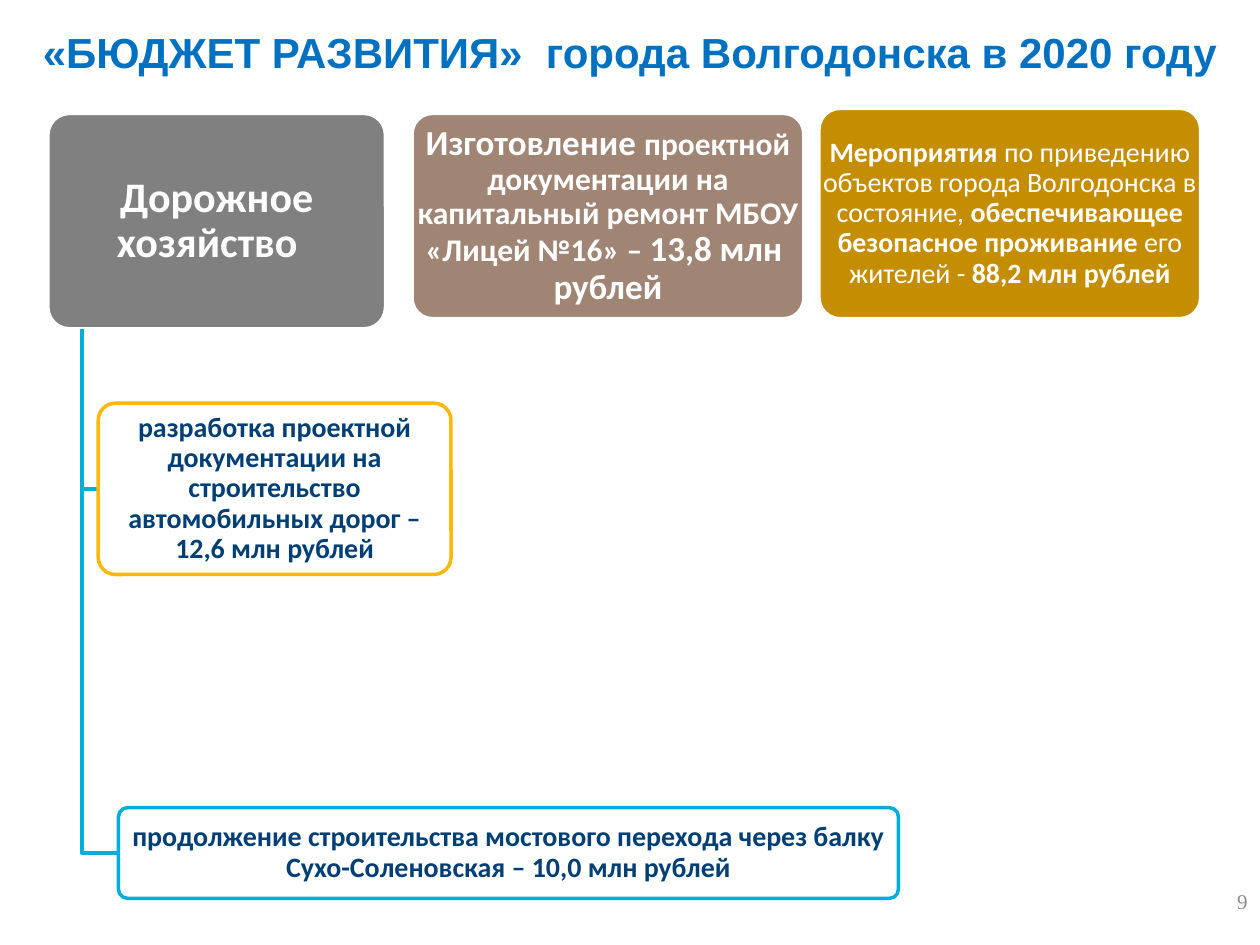
from lxml import etree
from pptx import Presentation
from pptx.dml.color import RGBColor
from pptx.enum.shapes import MSO_SHAPE
from pptx.enum.text import MSO_ANCHOR, MSO_AUTO_SIZE, PP_ALIGN
from pptx.util import Inches, Pt

ROUND = MSO_SHAPE.ROUNDED_RECTANGLE
TOP, MIDDLE = MSO_ANCHOR.TOP, MSO_ANCHOR.MIDDLE
CENTER, RIGHT = PP_ALIGN.CENTER, PP_ALIGN.RIGHT
NO_FIT = MSO_AUTO_SIZE.NONE

WHITE, NAVY, CYAN, AMBER = "FFFFFF", "003F75", "00ADDC", "FEB80A"


def rgb(value):
    return RGBColor.from_string(value)


def add_run(p, text, size=16, color=WHITE, bold=True, font="Calibri"):
    r = p.add_run()
    r.text = text
    r.font.name = font
    r.font.size = Pt(size)
    r.font.bold = bold
    r.font.color.rgb = rgb(color)


class Deck:
    line_width = 2
    corner = 0.1

    def __init__(self, width, height):
        self.prs = Presentation()
        self.prs.slide_width, self.prs.slide_height = Inches(width), Inches(height)
        self.s = self.prs.slides.add_slide(self.prs.slide_layouts[5])

    def outline(self, sp, color):
        sp.shadow.inherit = False
        sp.line.color.rgb = rgb(color)
        sp.line.width = Pt(self.line_width)

    def frame(self, sp, anchor=MIDDLE, align=CENTER, inset=(0.1, 0.05)):
        tf = sp.text_frame
        tf.word_wrap = True
        tf.auto_size = NO_FIT
        tf.vertical_anchor = anchor
        tf.margin_left = tf.margin_right = Inches(inset[0])
        tf.margin_top = tf.margin_bottom = Inches(inset[1])
        p = tf.paragraphs[0]
        p.alignment = align
        return p

    def title(self, text, x, y, w, h):
        sp = self.s.shapes.title
        sp.left, sp.top, sp.width, sp.height = map(Inches, (x, y, w, h))
        sp.fill.solid()
        sp.fill.fore_color.rgb = rgb(WHITE)
        add_run(self.frame(sp, TOP), text, size=24, color="0070C0", font="Arial")

    def text(self, runs, x, y, w, h, **layout):
        sp = self.s.shapes.add_textbox(*map(Inches, (x, y, w, h)))
        p = self.frame(sp, **layout)
        for text, style in runs:
            add_run(p, text, **style)
        return p

    def card(self, runs, x, y, w, h, fill=None, line=WHITE, inset=(0.03, 0.02)):
        sp = self.s.shapes.add_shape(ROUND, *map(Inches, (x, y, w, h)))
        sp.adjustments[0] = self.corner
        if fill:
            sp.fill.solid()
            sp.fill.fore_color.rgb = rgb(fill)
        else:
            sp.fill.background()
        self.outline(sp, line)
        # A separate box keeps the rounded corners from narrowing the text
        self.text(runs, x, y, w, h, inset=inset).line_spacing = 0.9

    def elbow(self, x1, y1, x2, y2):
        builder = self.s.shapes.build_freeform(Inches(x1), Inches(y1), scale=1.0)
        builder.add_line_segments(
            [(Inches(x1), Inches(y2)), (Inches(x2), Inches(y2))], close=False)
        sp = builder.convert_to_shape()
        sp.fill.background()
        self.outline(sp, CYAN)


def main():
    deck = Deck(10, 7.5)
    deck.title("«БЮДЖЕТ РАЗВИТИЯ»  города Волгодонска в 2020 году", 0, 0.16, 10, 0.5)

    # Main spending areas
    deck.card([("Дорожное хозяйство  ", {"size": 24})],
              0.38, 0.9, 2.68, 1.71, fill="808080", inset=(0.05, 0.03))
    deck.card([("Изготовление ", {"size": 20}),
               ("проектной документации на капитальный ремонт МБОУ «Лицей №16» – ",
                {"size": 18}),
               ("13,8 млн  рублей", {"size": 20})],
              3.27, 0.9, 3.11, 1.63, fill="A08574", inset=(0.04, 0.03))
    deck.card([("Мероприятия ", {}),
               ("по приведению объектов города Волгодонска в состояние, ",
                {"bold": False}),
               ("обеспечивающее безопасное проживание", {}),
               (" его жителей - ", {"bold": False}),
               ("88,2 млн рублей", {})],
              6.5, 0.86, 3.03, 1.67, fill="C58D01")

    # Road projects hanging from the first area
    trunk_x, trunk_y = 0.65, 2.61
    projects = [
        ("разработка проектной документации на строительство автомобильных дорог – "
         "12,6 млн рублей", AMBER, (0.78, 3.2, 2.8, 1.36)),
        ("продолжение строительства мостового перехода через балку "
         "Сухо-Соленовская – 10,0 млн рублей", CYAN, (0.94, 6.41, 6.19, 0.72)),
    ]
    for text, line, (x, y, w, h) in projects:
        deck.elbow(trunk_x, trunk_y, x, y + h / 2)
        deck.card([(text, {"color": NAVY})], x, y, w, h, line=line)

    # Page number
    deck.text([("9", {"size": 12, "color": "8C8C8C", "bold": False,
                      "font": "Times New Roman"})],
              9.06, 6.95, 0.94, 0.4, align=RIGHT)

    deck.prs.save("out.pptx")


if __name__ == "__main__":
    main()
